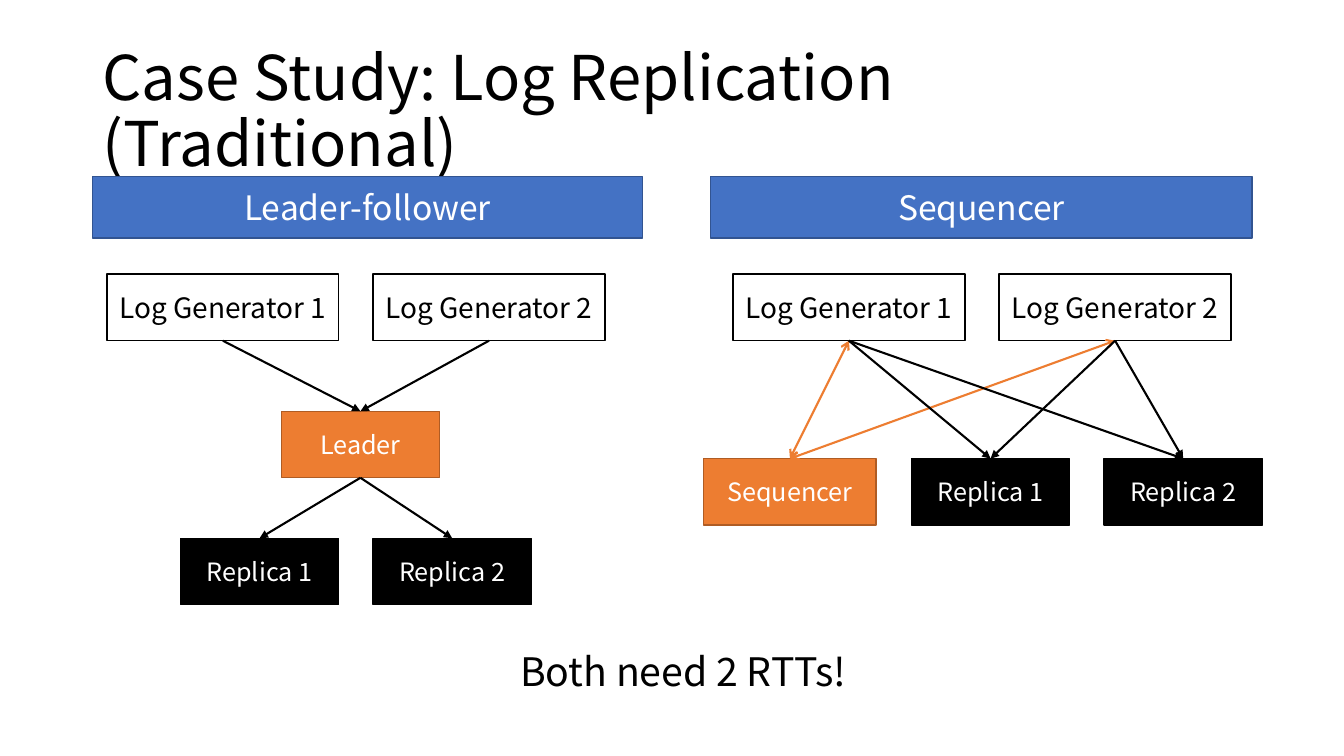
from lxml import etree
from pptx import Presentation
from pptx import util as u
from pptx.dml.color import RGBColor
from pptx.enum import shapes, text
from pptx.oxml import ns

EMU_PER_PX = 9144
BLACK = RGBColor(0x00, 0x00, 0x00)
WHITE = RGBColor(0xFF, 0xFF, 0xFF)
BLUE = RGBColor(0x44, 0x72, 0xC4)
DARK_BLUE = RGBColor(0x32, 0x54, 0x91)
ORANGE = RGBColor(0xED, 0x7D, 0x31)
DARK_ORANGE = RGBColor(0xAF, 0x5C, 0x24)

HEADER = {"fill": BLUE, "line": DARK_BLUE, "color": WHITE, "size": 24}
GENERATOR = {"fill": WHITE, "line": BLACK, "color": BLACK, "size": 20}
COORDINATOR = {"fill": ORANGE, "line": DARK_ORANGE, "color": WHITE, "size": 18}
REPLICA = {"fill": BLACK, "line": BLACK, "color": WHITE, "size": 18}

HEADER_TOP, HEADER_HEIGHT = 175, 61
GENERATOR_TOP, GENERATOR_WIDTH, GENERATOR_STEP = 272, 230, 264
REPLICA_WIDTH, REPLICA_STEP = 157, 191
NODE_HEIGHT = 66
TOP_SITE, BOTTOM_SITE = 0, 2


def px(*lengths):
    return [u.Emu(length * EMU_PER_PX) for length in lengths]


def apply(target, values):
    for name, value in values.items():
        setattr(target, name, value)


class SlideBuilder:
    font = "Noto Sans CJK SC"

    def __init__(self, slide):
        self.slide = slide

    def set_text(self, shape, wording, size, color, frame_format, paragraph_format):
        frame = shape.text_frame
        apply(frame, {"word_wrap": True, **frame_format})
        paragraph = frame.paragraphs[0]
        apply(paragraph, paragraph_format)
        run = paragraph.add_run()
        run.text = wording
        apply(run.font, {"name": self.font, "size": u.Pt(size)})
        run.font.color.rgb = color

    def label(self, wording, box, size, frame_format, paragraph_format):
        shape = self.slide.shapes.add_textbox(*px(*box))
        self.set_text(shape, wording, size, BLACK, frame_format, paragraph_format)

    def box(self, wording, left, top, width, height, style):
        shape = self.slide.shapes.add_shape(
            shapes.MSO_SHAPE.RECTANGLE, *px(left, top, width, height))
        shape.shadow.inherit = False
        shape.fill.solid()
        shape.fill.fore_color.rgb = style["fill"]
        shape.line.color.rgb = style["line"]
        shape.line.width = u.Pt(1)
        self.set_text(shape, wording, style["size"], style["color"],
                      {"vertical_anchor": text.MSO_ANCHOR.MIDDLE},
                      {"alignment": text.PP_ALIGN.CENTER})
        return shape

    def row(self, name, left, top, width, step, style):
        """Draw a numbered pair of equal boxes."""
        return [self.box(f"{name} {index + 1}", left + index * step, top,
                         width, NODE_HEIGHT, style) for index in range(2)]

    def generators(self, left):
        return self.row("Log Generator", left, GENERATOR_TOP,
                        GENERATOR_WIDTH, GENERATOR_STEP, GENERATOR)

    def replicas(self, left, top):
        return self.row("Replica", left, top, REPLICA_WIDTH, REPLICA_STEP, REPLICA)

    def arrow(self, source, target, color=BLACK, ends=(("tailEnd", "triangle"),)):
        """Join the bottom of source to the top of target."""
        connector = self.slide.shapes.add_connector(
            shapes.MSO_CONNECTOR.STRAIGHT, 0, 0, 0, 0)
        connector.begin_connect(source, BOTTOM_SITE)
        connector.end_connect(target, TOP_SITE)
        connector.line.color.rgb = color
        connector.line.width = u.Pt(1.5)
        properties = connector._element.spPr
        outline = properties.find(ns.qn("a:ln"))
        for end, kind in ends:
            etree.SubElement(outline, ns.qn(f"a:{end}"), type=kind)
        etree.SubElement(properties, ns.qn("a:effectLst"))

    def arrows(self, sources, targets, **look):
        for source in sources:
            for target in targets:
                self.arrow(source, target, **look)


def draw_leader_follower(builder):
    builder.box("Leader-follower", 92, HEADER_TOP, 545, HEADER_HEIGHT, HEADER)
    generators = builder.generators(106)
    leader = builder.box("Leader", 279, 408, REPLICA_WIDTH, NODE_HEIGHT, COORDINATOR)
    replicas = builder.replicas(179, 534)
    builder.arrows(generators, [leader])
    builder.arrows([leader], replicas)


def draw_sequencer(builder):
    builder.box("Sequencer", 705, HEADER_TOP, 537, HEADER_HEIGHT, HEADER)
    generators = builder.generators(727)
    sequencer = builder.box("Sequencer", 698, 455, 171, NODE_HEIGHT, COORDINATOR)
    replicas = builder.replicas(904, 455)
    builder.arrows(generators, [sequencer], color=ORANGE,
                   ends=(("headEnd", "arrow"), ("tailEnd", "arrow")))
    builder.arrows(generators, replicas)


def main():
    presentation = Presentation()
    slide_width, slide_height = px(1333, 750)
    apply(presentation, {"slide_width": slide_width, "slide_height": slide_height})
    builder = SlideBuilder(presentation.slides.add_slide(presentation.slide_layouts[6]))
    builder.label("Case Study: Log Replication (Traditional)", (92, 40, 1150, 145), 44,
                  {"vertical_anchor": text.MSO_ANCHOR.MIDDLE}, {"line_spacing": 0.9})
    draw_leader_follower(builder)
    draw_sequencer(builder)
    builder.label("Both need 2 RTTs!", (506, 637, 596, 57), 28,
                  {"auto_size": text.MSO_AUTO_SIZE.SHAPE_TO_FIT_TEXT}, {})
    presentation.save("out.pptx")


if __name__ == "__main__":
    main()
